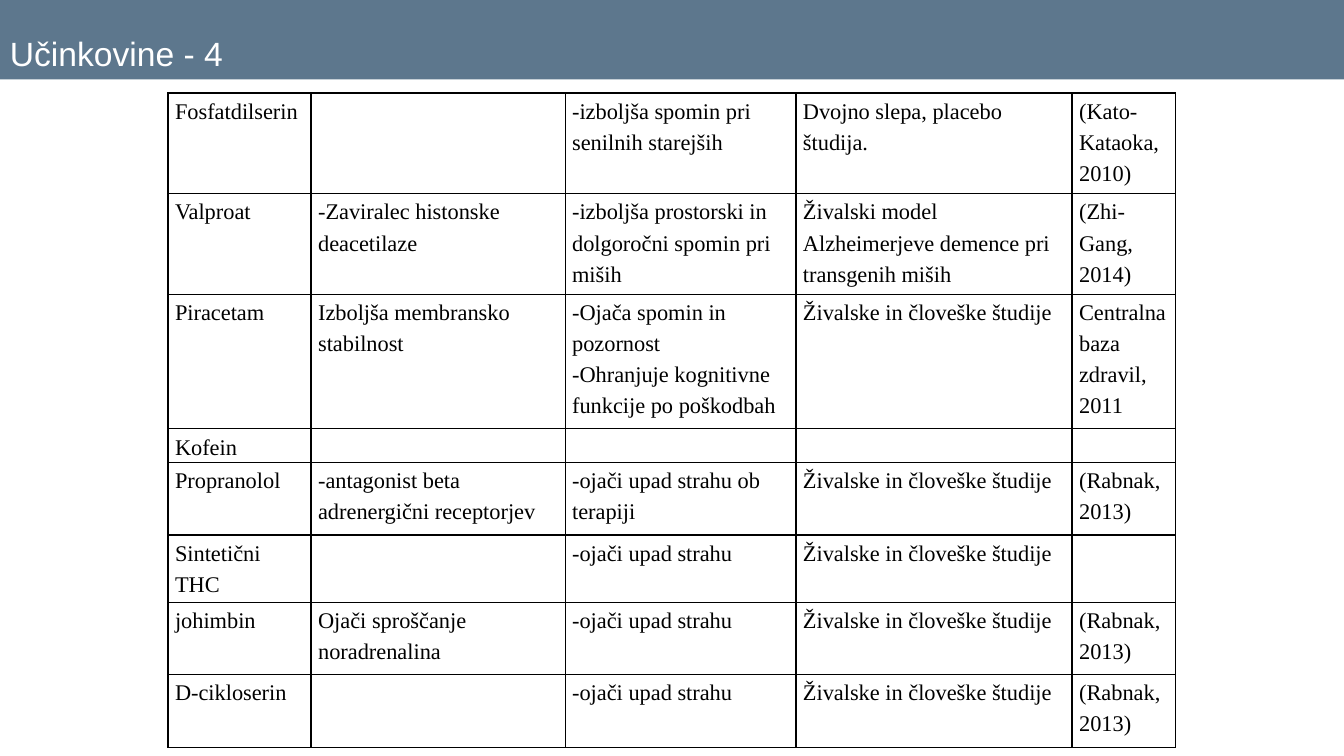
from dataclasses import dataclass

from lxml import etree
from pptx import Presentation
from pptx import util as u
from pptx.dml.color import RGBColor
from pptx.enum import shapes, text
from pptx.oxml import ns

COLORS = {"band": "5D778D", "title": "FFFFFF", "ink": "000000"}
WIDTH, HEIGHT = u.Inches(13.33), u.Inches(7.5)
ROW_UNIT = 0.032  # share of the slide height
COLUMN_SHARES = (0.142, 0.252, 0.229, 0.274, 0.103)  # of the table width


@dataclass(frozen=True)
class Area:
    """A rectangle in shares of the slide's width and height."""
    left: float
    top: float
    width: float
    height: float

    def lengths(self) -> tuple[int, int, int, int]:
        return (round(self.left * WIDTH), round(self.top * HEIGHT),
                round(self.width * WIDTH), round(self.height * HEIGHT))


@dataclass(frozen=True)
class Substance:
    units: int
    name: str
    mechanism: str = ""
    effect: str = ""
    evidence: str = ""
    reference: str = ""

    def texts(self) -> tuple[str, ...]:
        return self.name, self.mechanism, self.effect, self.evidence, self.reference


BAND = Area(0, 0, 1, 0.105)
TITLE = Area(0, 0.01, 1, 0.094)
TABLE = Area(0.125, 0.123, 0.75, 0.865)

STUDIES = "Živalske in človeške študije"
FEAR = "-ojači upad strahu"
RABNAK = "(Rabnak, 2013)"
SUBSTANCES = (
    Substance(4, "Fosfatdilserin", "", "-izboljša spomin pri senilnih starejših",
              "Dvojno slepa, placebo študija.", "(Kato-Kataoka, 2010)"),
    Substance(4, "Valproat", "-Zaviralec histonske deacetilaze",
              "-izboljša prostorski in dolgoročni spomin pri miših",
              "Živalski model Alzheimerjeve demence pri transgenih miših",
              "(Zhi-Gang, 2014)"),
    Substance(5, "Piracetam", "Izboljša membransko stabilnost",
              "-Ojača spomin in pozornost\n-Ohranjuje kognitivne funkcije po poškodbah",
              STUDIES, "Centralna baza zdravil, 2011"),
    Substance(1, "Kofein"),
    Substance(3, "Propranolol", "-antagonist beta adrenergični receptorjev",
              FEAR + " ob terapiji", STUDIES, RABNAK),
    Substance(2, "Sintetični THC", "", FEAR, STUDIES),
    Substance(3, "johimbin", "Ojači sproščanje noradrenalina", FEAR, STUDIES, RABNAK),
    Substance(3, "D-cikloserin", "", FEAR, STUDIES, RABNAK),
)


def write(frame, content: str, *, font: str, size: float, color: str,
          spacing: float = 1.0) -> None:
    for index, line in enumerate(content.split("\n")):
        para = frame.add_paragraph() if index else frame.paragraphs[0]
        para.line_spacing = spacing
        span = para.add_run()
        span.text = line
        span.font.name = font
        span.font.size = u.Pt(size)
        span.font.color.rgb = RGBColor.from_string(COLORS[color])


def outline(cell, color: str, points: float) -> None:
    """Draw all four borders; they must precede the fill in the cell's XML."""
    properties = cell._tc.get_or_add_tcPr()
    for index, side in enumerate(("lnL", "lnR", "lnT", "lnB")):
        line = etree.Element(ns.qn(f"a:{side}"), w=str(u.Pt(points)))
        fill = etree.SubElement(line, ns.qn("a:solidFill"))
        etree.SubElement(fill, ns.qn("a:srgbClr"), val=COLORS[color])
        properties.insert(index, line)


def add_title(page, content: str) -> None:
    band = page.shapes.add_shape(shapes.MSO_SHAPE.RECTANGLE, *BAND.lengths())
    band.shadow.inherit = False
    band.fill.solid()
    band.fill.fore_color.rgb = RGBColor.from_string(COLORS["band"])
    band.line.fill.background()
    box = page.shapes.add_textbox(*TITLE.lengths())
    box.text_frame.word_wrap = True
    box.text_frame.vertical_anchor = text.MSO_ANCHOR.BOTTOM
    write(box.text_frame, content, font="Arial", size=24, color="title")


def add_substances(page, substances: tuple[Substance, ...]) -> None:
    holder = page.shapes.add_table(len(substances), len(COLUMN_SHARES), *TABLE.lengths())
    table = holder.table
    table.first_row = table.horz_banding = False
    for column, share in zip(table.columns, COLUMN_SHARES):
        column.width = round(share * TABLE.width * WIDTH)
    for row, substance in zip(table.rows, substances):
        row.height = round(substance.units * ROW_UNIT * HEIGHT)
        for cell, content in zip(row.cells, substance.texts()):
            cell.margin_left = cell.margin_right = u.Inches(0.07)
            cell.margin_top = cell.margin_bottom = 0
            cell.fill.background()
            outline(cell, "ink", 1)
            if content:
                write(cell.text_frame, content, font="Times New Roman", size=16,
                      color="ink", spacing=1.25)
    holder.height = round(TABLE.height * HEIGHT)


def main() -> None:
    deck = Presentation()
    deck.slide_width, deck.slide_height = WIDTH, HEIGHT
    page = deck.slides.add_slide(deck.slide_layouts[6])
    add_title(page, "Učinkovine - 4")
    add_substances(page, SUBSTANCES)
    deck.save("out.pptx")


if __name__ == "__main__":
    main()
